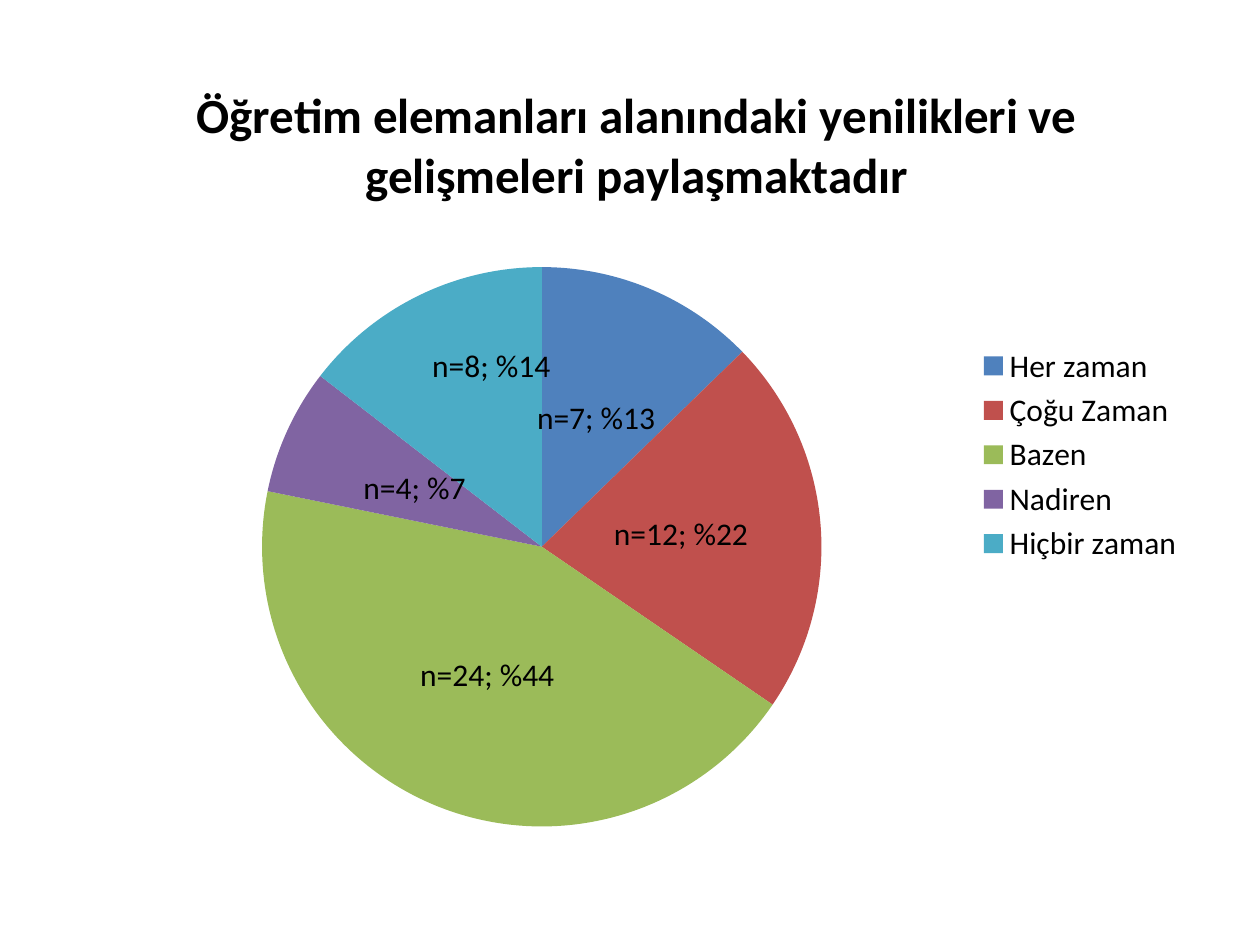
from lxml import etree
from pptx import Presentation
from pptx.chart.data import CategoryChartData
from pptx.dml.color import RGBColor
from pptx.enum.chart import XL_CHART_TYPE, XL_LABEL_POSITION, XL_LEGEND_POSITION
from pptx.oxml.ns import qn
from pptx.util import Inches, Pt

TITLE = "Öğretim elemanları alanındaki yenilikleri ve gelişmeleri paylaşmaktadır"
ANSWERS = [
    ("Her zaman", 7, 13, "4F81BD"),
    ("Çoğu Zaman", 12, 22, "C0504D"),
    ("Bazen", 24, 44, "9BBB59"),
    ("Nadiren", 4, 7, "8064A2"),
    ("Hiçbir zaman", 8, 14, "4BACC6"),
]
CHART_WIDTH = Inches(9)
CHART_HEIGHT = Inches(6.18)


def set_font(font, size, bold=False):
    font.name = "Calibri"
    font.size = Pt(size)
    font.bold = bold
    font.color.rgb = RGBColor.from_string("000000")


def set_layout(parent, index, **values):
    for old_layout in parent.findall(qn("c:layout")):
        parent.remove(old_layout)
    layout = etree.Element(qn("c:layout"))
    parent.insert(index, layout)
    manual_layout = etree.SubElement(layout, qn("c:manualLayout"))
    for tag, value in values.items():
        etree.SubElement(manual_layout, qn(f"c:{tag}")).set("val", str(value))


presentation = Presentation()
presentation.slide_width = Inches(10)
presentation.slide_height = Inches(7.5)
slide = presentation.slides.add_slide(presentation.slide_layouts[6])

# Pie chart
chart_data = CategoryChartData()
chart_data.categories = [name for name, count, percent, color in ANSWERS]
chart_data.add_series(TITLE, [count for name, count, percent, color in ANSWERS])
chart = slide.shapes.add_chart(
    XL_CHART_TYPE.PIE, Inches(0.5), Inches(0.52), CHART_WIDTH, CHART_HEIGHT, chart_data
).chart
set_font(chart.font, 18)

# Title
chart.has_title = True
title_run = chart.chart_title.text_frame.paragraphs[0].add_run()
title_run.text = TITLE
set_font(title_run.font, 28, bold=True)
chart.chart_title.include_in_layout = False
set_layout(chart.chart_title._element, 1, xMode="edge", yMode="edge", x=0.11, y=0.01)

# Legend
chart.has_legend = True
chart.legend.position = XL_LEGEND_POSITION.RIGHT
chart.legend.include_in_layout = False
set_font(chart.legend.font, 18)

# Slices and their labels
plot = chart.plots[0]
plot.vary_by_categories = True
series = plot.series[0]
labels = series.data_labels
labels.show_value = True
labels.show_percentage = True
labels.position = XL_LABEL_POSITION.CENTER
set_font(labels.font, 18)
for index, (name, count, percent, color) in enumerate(ANSWERS):
    point = series.points[index]
    point.format.fill.solid()
    point.format.fill.fore_color.rgb = RGBColor.from_string(color)
    label_run = point.data_label.text_frame.paragraphs[0].add_run()
    label_run.text = f"n={count}; %{percent}"
    set_font(label_run.font, 18)
    point.data_label.position = XL_LABEL_POSITION.CENTER

# Every label shows value and percentage; the last one moves up, clear of the first
point_labels = labels._element.findall(qn("c:dLbl"))
for point_label in point_labels:
    point_label.find(qn("c:showPercent")).set("val", "1")
set_layout(point_labels[-1], 1, x=0.01, y=-0.07)

# Place of the pie, as shares of the chart area
diameter = Inches(4.44)
set_layout(
    chart._chartSpace.chart.plotArea, 0,
    layoutTarget="inner", xMode="edge", yMode="edge",
    x=Inches(1.58) / CHART_WIDTH, y=Inches(1.6) / CHART_HEIGHT,
    w=diameter / CHART_WIDTH, h=diameter / CHART_HEIGHT,
)

presentation.save("out.pptx")
